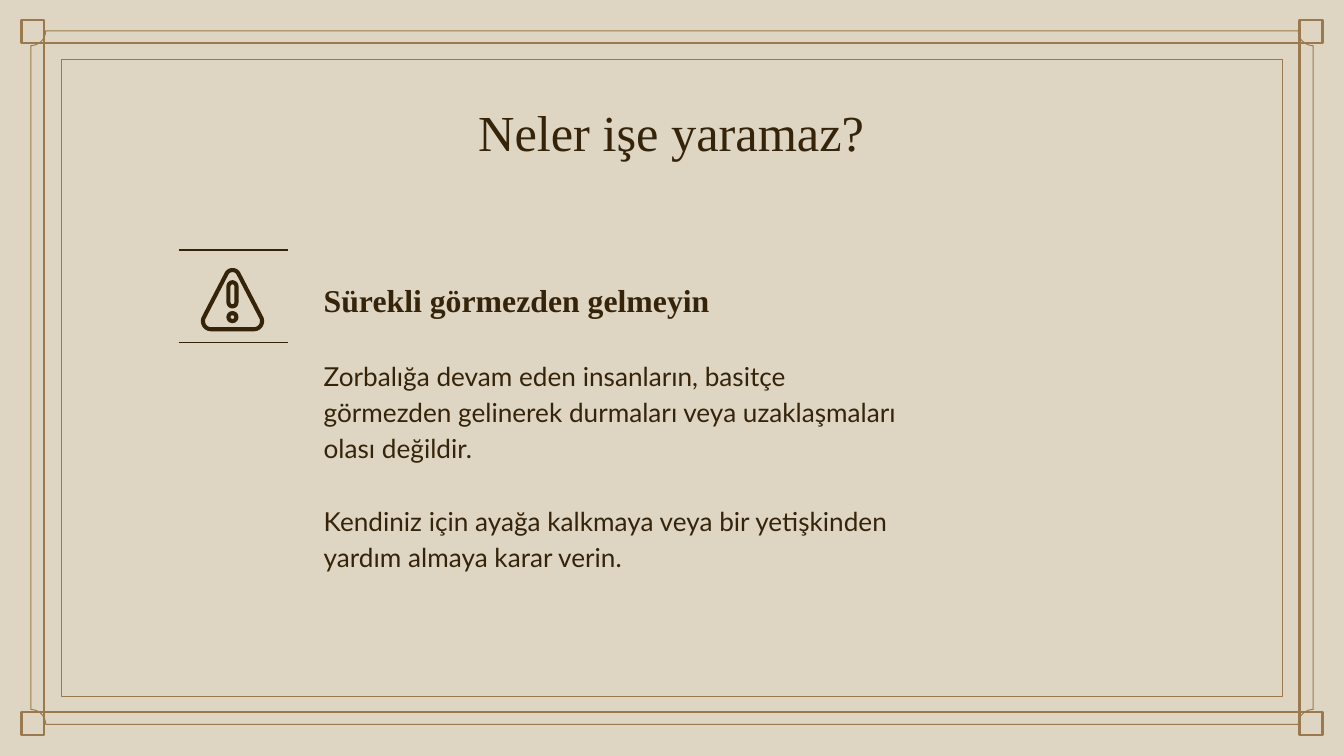
from itertools import product
from math import cos, radians, sin

from lxml.etree import SubElement
from pptx import Presentation
from pptx.dml.color import RGBColor
from pptx.enum.shapes import MSO_CONNECTOR, MSO_SHAPE
from pptx.enum.text import MSO_ANCHOR, PP_ALIGN
from pptx.oxml.ns import qn
from pptx.util import Inches, Pt

WIDTH = 10
HEIGHT = WIDTH * 9 / 16
PAPER, BRONZE, INK = "DED6C2", "9B794E", "35240A"
SERIF, SANS = "Times New Roman", "Lato"

TITLE = "Neler işe yaramaz?"
HEADING = "Sürekli görmezden gelmeyin"
ADVICE = [
    "Zorbalığa devam eden insanların, basitçe görmezden gelinerek durmaları "
    "veya uzaklaşmaları olası değildir.",
    "Kendiniz için ayağa kalkmaya veya bir yetişkinden yardım almaya karar verin.",
]

# Borders: left, top, width, height, line width
BORDERS = [(0.33, 0.32, 9.34, 4.98, 1.28), (0.46, 0.44, 9.08, 4.74, 0.5)]
CORNER_SIZE = 0.17
CORNER_LEFTS, CORNER_TOPS = (0.16, 9.67), (0.15, 5.3)

# Arcs: centre x, centre y, radius, start angle, end angle
NOTCHED_BORDER = [
    (9.77, 0.23, 0.11, 180, 90),
    (9.77, 5.39, 0.11, 270, 180),
    (0.23, 5.39, 0.11, 0, -90),
    (0.23, 0.23, 0.11, 90, 0),
]
WARNING_TRIANGLE = [
    (1.73, 2.06, 0.05, -153, -27),
    (1.89, 2.39, 0.06, -27, 90),
    (1.57, 2.39, 0.06, 90, 207),
]
ICON_STROKE = 2.2
RULE_LEFT, RULE_RIGHT, RULE_TOPS = 1.33, 2.14, (1.86, 2.55)


def color(hex_value):
    return RGBColor.from_string(hex_value)


def style_outline(shape, line_color, line_width):
    shape.shadow.inherit = False
    shape.fill.background()
    shape.line.color.rgb = color(line_color)
    shape.line.width = Pt(line_width)


def add_outline(kind, left, top, width, height, line_color, line_width):
    shape = slide.shapes.add_shape(
        kind, Inches(left), Inches(top), Inches(width), Inches(height))
    style_outline(shape, line_color, line_width)
    return shape


def add_arc_outline(arcs, line_color, line_width, steps=12):
    """Draw a closed outline of arcs joined by straight sides."""
    points = []
    for x, y, radius, start, end in arcs:
        for step in range(steps + 1):
            angle = radians(start + (end - start) * step / steps)
            points.append((Inches(x + radius * cos(angle)),
                           Inches(y + radius * sin(angle))))
    builder = slide.shapes.build_freeform(*points[0])
    builder.add_line_segments(points[1:], close=True)
    style_outline(builder.convert_to_shape(), line_color, line_width)


def add_rule(left, right, top):
    rule = slide.shapes.add_connector(
        MSO_CONNECTOR.STRAIGHT, Inches(left), Inches(top), Inches(right), Inches(top))
    rule.line.color.rgb = color(INK)
    rule.line.width = Pt(0.75)
    SubElement(rule._element.spPr, qn("a:effectLst"))


def add_text(paragraphs, left, top, width, height, font, size, bold=False,
             align=PP_ALIGN.LEFT, anchor=MSO_ANCHOR.TOP, spacing=1.15, gap=0):
    box = slide.shapes.add_textbox(
        Inches(left), Inches(top), Inches(width), Inches(height))
    frame = box.text_frame
    frame.word_wrap = True
    frame.vertical_anchor = anchor
    frame.margin_left = frame.margin_right = Inches(0.1)
    frame.margin_top = frame.margin_bottom = Inches(0.1)
    for index, text in enumerate(paragraphs):
        paragraph = frame.paragraphs[0] if index == 0 else frame.add_paragraph()
        paragraph.alignment = align
        paragraph.line_spacing = spacing
        if index:
            paragraph.space_before = Pt(gap)
        run = paragraph.add_run()
        run.text = text
        run.font.name = font
        run.font.size = Pt(size)
        run.font.bold = bold
        run.font.color.rgb = color(INK)


presentation = Presentation()
presentation.slide_width = Inches(WIDTH)
presentation.slide_height = Inches(HEIGHT)
slide = presentation.slides.add_slide(presentation.slide_layouts[6])
slide.background.fill.solid()
slide.background.fill.fore_color.rgb = color(PAPER)

for left, top, width, height, line_width in BORDERS:
    add_outline(MSO_SHAPE.RECTANGLE, left, top, width, height, BRONZE, line_width)
add_arc_outline(NOTCHED_BORDER, BRONZE, 0.5)
for left, top in product(CORNER_LEFTS, CORNER_TOPS):
    add_outline(MSO_SHAPE.RECTANGLE, left, top, CORNER_SIZE, CORNER_SIZE, BRONZE, 1.28)

add_text([TITLE], 0.78, 0.65, 8.43, 0.63, SERIF, 27, align=PP_ALIGN.CENTER, spacing=1)
add_text(ADVICE, 2.31, 2.55, 4.62, 1.86, SANS, 14, gap=19.3)
add_text([HEADING], 2.31, 1.99, 4.45, 0.48, SERIF, 17, bold=True,
         anchor=MSO_ANCHOR.BOTTOM)

for top in RULE_TOPS:
    add_rule(RULE_LEFT, RULE_RIGHT, top)
add_arc_outline(WARNING_TRIANGLE, INK, ICON_STROKE)
add_outline(MSO_SHAPE.OVAL, 1.7, 2.33, 0.06, 0.06, INK, ICON_STROKE)
exclamation_bar = add_outline(
    MSO_SHAPE.ROUNDED_RECTANGLE, 1.7, 2.1, 0.06, 0.18, INK, ICON_STROKE)
exclamation_bar.adjustments[0] = 0.5

presentation.save("out.pptx")
